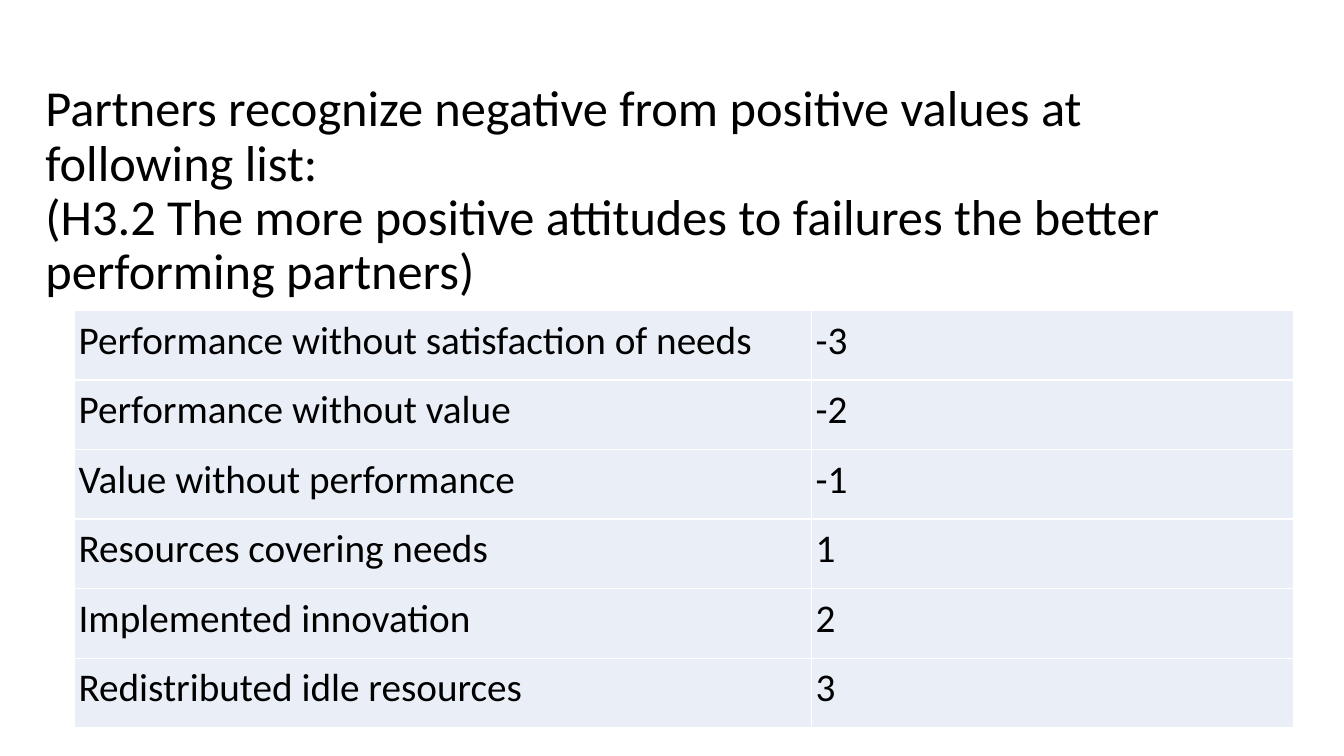
from dataclasses import dataclass

from lxml.etree import SubElement
from pptx import Presentation
from pptx.dml.color import RGBColor
from pptx.enum.text import MSO_ANCHOR, MSO_AUTO_SIZE, PP_ALIGN
from pptx.oxml.ns import qn
from pptx.slide import Slide
from pptx.table import _Cell
from pptx.text.text import _Paragraph
from pptx.util import Inches, Pt

COLORS = {"text": "000000", "cell": "EAEFF7", "border": "FFFFFF"}
FONT = "Calibri"
TITLE = (
    "Partners recognize negative from positive values at following list:\n"
    "(H3.2 The more positive attitudes to failures the better performing partners)"
)
COLUMN_WIDTHS = (7.31, 4.78)
ROW_HEIGHT = 0.69
CELL_MARGIN = 0.04


@dataclass(frozen=True)
class ValueRating:
    label: str
    score: int


RATINGS = (
    ValueRating("Performance without satisfaction of needs", -3),
    ValueRating("Performance without value", -2),
    ValueRating("Value without performance", -1),
    ValueRating("Resources covering needs", 1),
    ValueRating("Implemented innovation", 2),
    ValueRating("Redistributed idle resources", 3),
)


def format_paragraph(para: _Paragraph, size: int, spacing: float, after: int) -> None:
    para.alignment = PP_ALIGN.LEFT
    para.line_spacing = spacing
    para.space_before = Pt(0)
    para.space_after = Pt(after)
    for span in para.runs:
        span.font.name = FONT
        span.font.size = Pt(size)
        span.font.color.rgb = RGBColor.from_string(COLORS["text"])


def add_title(page: Slide) -> None:
    box = page.shapes.title
    box.left, box.top = Inches(0.35), Inches(0.65)
    box.width, box.height = Inches(12.36), Inches(2.51)
    frame = box.text_frame
    frame.word_wrap = True
    frame.auto_size = MSO_AUTO_SIZE.NONE
    frame.vertical_anchor = MSO_ANCHOR.MIDDLE
    para = frame.paragraphs[0]
    para.text = TITLE
    format_paragraph(para, size=36, spacing=0.9, after=0)


def add_borders(cell: _Cell) -> None:
    properties = cell._tc.get_or_add_tcPr()
    for side in ("L", "R", "T", "B"):
        line = SubElement(properties, qn(f"a:ln{side}"), w=str(Pt(1)))
        fill = SubElement(line, qn("a:solidFill"))
        SubElement(fill, qn("a:srgbClr"), val=COLORS["border"])


def fill_cell(cell: _Cell, text: str) -> None:
    cell.margin_left = cell.margin_right = Inches(CELL_MARGIN)
    cell.margin_top = cell.margin_bottom = Inches(CELL_MARGIN)
    add_borders(cell)
    cell.fill.solid()
    cell.fill.fore_color.rgb = RGBColor.from_string(COLORS["cell"])
    para = cell.text_frame.paragraphs[0]
    para.text = text
    format_paragraph(para, size=28, spacing=1.05, after=8)


def add_ratings_table(page: Slide) -> None:
    table = page.shapes.add_table(
        len(RATINGS), len(COLUMN_WIDTHS), Inches(0.74), Inches(3.08),
        Inches(sum(COLUMN_WIDTHS)), Inches(ROW_HEIGHT * len(RATINGS)),
    ).table
    table.first_row = False
    table.horz_banding = False
    for column, width in zip(table.columns, COLUMN_WIDTHS):
        column.width = Inches(width)
    for row, rating in zip(table.rows, RATINGS):
        row.height = Inches(ROW_HEIGHT)
        for cell, text in zip(row.cells, (rating.label, str(rating.score))):
            fill_cell(cell, text)


def main() -> None:
    deck = Presentation()
    deck.slide_width, deck.slide_height = Inches(13.33), Inches(7.5)
    # Title-only layout
    page = deck.slides.add_slide(deck.slide_layouts[5])
    add_title(page)
    add_ratings_table(page)
    deck.save("out.pptx")


if __name__ == "__main__":
    main()
